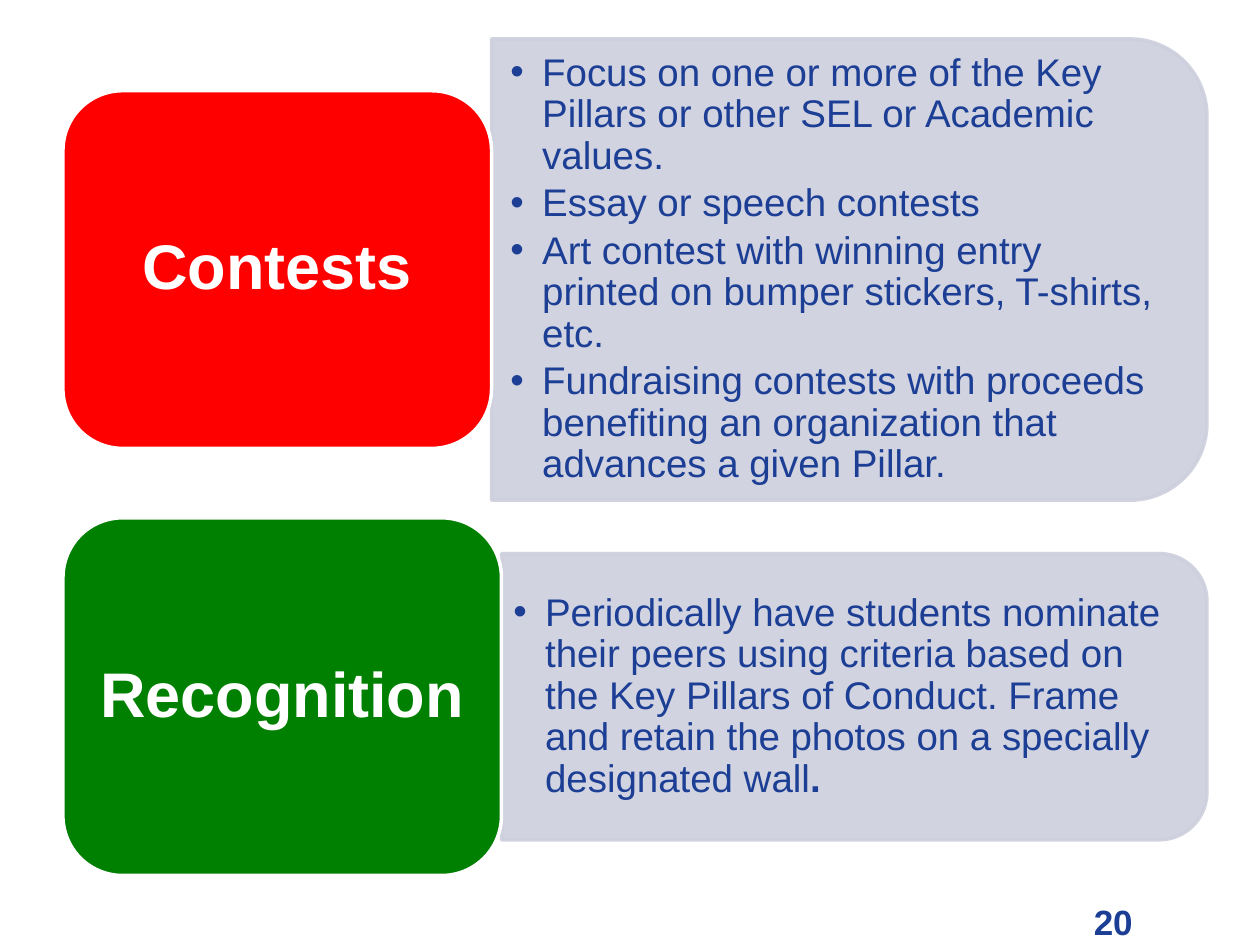
"""Build a slide with two activity labels, each beside a panel of bullet points."""
from lxml import etree
from pptx import Presentation
from pptx.dml.color import RGBColor
from pptx.enum.shapes import MSO_SHAPE
from pptx.enum.text import MSO_ANCHOR, PP_ALIGN
from pptx.oxml.ns import qn
from pptx.util import Cm, Pt

ROUND_RECT = MSO_SHAPE.ROUNDED_RECTANGLE
ROUND_TOP = MSO_SHAPE.ROUND_2_SAME_RECTANGLE
MIDDLE = MSO_ANCHOR.MIDDLE
CENTER = PP_ALIGN.CENTER
NAVY, GREY, WHITE = "1C3F95", "CDCFDD", "FFFFFF"
LEFT, RIGHT, TOP, PITCH, LABEL_H = 1.27, 24.33, 1.83, 8.61, 7.21

ROWS = [
    ("Contests", "FF0000", 8.64, 9.3, 0.38, [
        ["Focus on one or more of the Key Pillars or other SEL or Academic values."],
        ["Essay or speech contests"],
        ["Art contest with winning entry printed on bumper stickers, T-shirts, etc."],
        ["Fundraising contests with proceeds benefiting an organization that "
         "advances a given Pillar."],
    ]),
    ("Recognition", "008000", 8.84, 5.77, 0.24, [
        ["Periodically have students nominate their peers using criteria based on "
         "the Key Pillars of Conduct. Frame and retain the photos on a specially "
         "designated wall", "."],
    ]),
]


def rgb(value):
    return RGBColor.from_string(value)


def add_run(p, text, size, color, bold=False):
    r = p.add_run()
    r.text = text
    r.font.name = "Arial"
    r.font.size = Pt(size)
    r.font.bold = bold
    r.font.color.rgb = rgb(color)


prs = Presentation()
prs.slide_width, prs.slide_height = Cm(25.4), Cm(19.05)
s = prs.slides.add_slide(prs.slide_layouts[6])

for i, (name, color, label_w, panel_h, inset, bullets) in enumerate(ROWS):
    top = TOP + i * PITCH
    mid = top + LABEL_H / 2
    panel_left = LEFT + label_w
    panel_w = RIGHT - panel_left

    panel = s.shapes.add_shape(
        ROUND_TOP, Cm(panel_left + (panel_w - panel_h) / 2), Cm(mid - panel_w / 2),
        Cm(panel_h), Cm(panel_w))
    panel.rotation = 90
    panel.shadow.inherit = False
    panel.fill.solid()
    panel.fill.fore_color.rgb = rgb(GREY)
    panel.line.color.rgb = rgb(GREY)
    panel.line.width = Pt(2)
    for clr in panel._element.spPr.iter(qn("a:srgbClr")):
        etree.SubElement(clr, qn("a:alpha"), val="90000")

    pad = panel_h * 0.05
    box = s.shapes.add_textbox(
        Cm(panel_left), Cm(mid - panel_h / 2 + pad),
        Cm(panel_w - pad), Cm(panel_h - 2 * pad))
    tf = box.text_frame
    tf.word_wrap = True
    tf.vertical_anchor = MIDDLE
    tf.margin_left = tf.margin_right = Cm(inset)
    tf.margin_top = tf.margin_bottom = Cm(inset / 2)
    for j, runs in enumerate(bullets):
        p = tf.add_paragraph() if j else tf.paragraphs[0]
        p.level = 1
        p.line_spacing = 0.9
        p.space_after = Pt(3.3)
        pPr = p._p.get_or_add_pPr()
        pPr.set("marL", str(Cm(0.64)))
        pPr.set("indent", str(-Cm(0.64)))
        etree.SubElement(pPr, qn("a:buFont"), typeface="Arial")
        etree.SubElement(pPr, qn("a:buChar"), char="•")
        for k, text in enumerate(runs):
            add_run(p, text, 22, NAVY, bold=k > 0)

    label = s.shapes.add_shape(ROUND_RECT, Cm(LEFT), Cm(top), Cm(label_w), Cm(LABEL_H))
    label.shadow.inherit = False
    label.fill.solid()
    label.fill.fore_color.rgb = rgb(color)
    label.line.color.rgb = rgb(WHITE)
    label.line.width = Pt(2)
    tf = label.text_frame
    tf.word_wrap = True
    tf.vertical_anchor = MIDDLE
    tf.margin_left = tf.margin_right = Cm(0.38)
    tf.margin_top = tf.margin_bottom = Cm(0.19)
    p = tf.paragraphs[0]
    p.alignment = CENTER
    p.line_spacing = 0.9
    add_run(p, name, 36, WHITE, bold=True)

number = s.shapes.add_textbox(Cm(21.8), Cm(18.03), Cm(1.37), Cm(1.12))
number.text_frame.word_wrap = False
add_run(number.text_frame.paragraphs[0], "20", 20, NAVY, bold=True)

prs.save("out.pptx")
